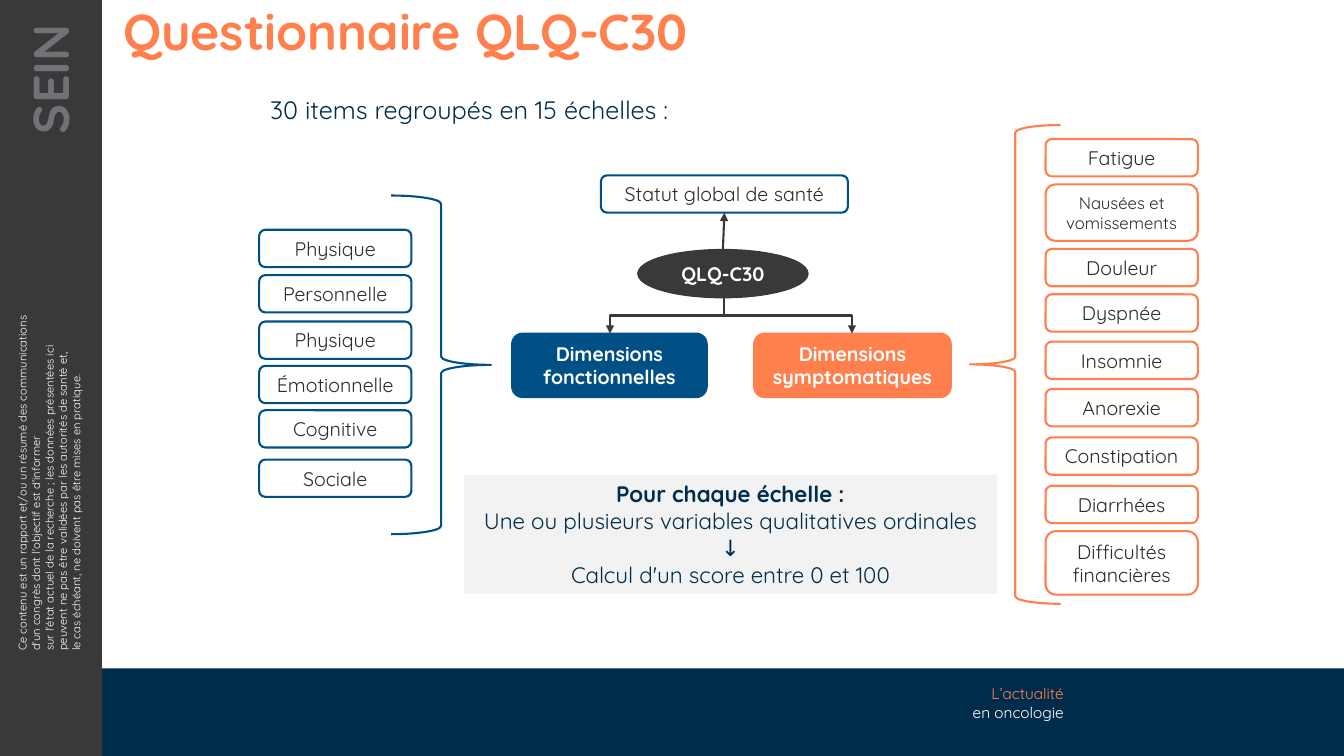
from lxml import etree
from pptx import Presentation
from pptx.dml.color import RGBColor
from pptx.enum import shapes, text
from pptx.oxml import ns
from pptx.util import Inches, Pt

NAVY = RGBColor(0x00, 0x2C, 0x4C)
INK = RGBColor(0x00, 0x2D, 0x4C)
BLUE = RGBColor(0x00, 0x50, 0x86)
CORAL = RGBColor(0xFF, 0x7F, 0x4D)
DARK = RGBColor(0x3A, 0x38, 0x39)
BLACK = RGBColor(0x2B, 0x2A, 0x2C)
GREY = RGBColor(0x73, 0x70, 0x78)
PALE = RGBColor(0xF2, 0xF2, 0xF2)
WHITE = RGBColor(0xFF, 0xFF, 0xFF)

KIND = shapes.MSO_SHAPE
LINK = shapes.MSO_CONNECTOR
ALIGN = text.PP_ALIGN
MID = text.MSO_ANCHOR.MIDDLE

NOTE = ("Ce contenu est un rapport et/ou un résumé des communications "
        "d'un congrès dont l'objectif est d'informer \v"
        "sur l'état actuel de la recherche ; les données présentées ici "
        "peuvent ne pas être validées par les autorités de santé et, \v"
        "le cas échéant, ne doivent pas être mises en pratique.")

# Label, top, height, text size
LEFT = [
    ("Physique", 2.28, 0.37, 14),
    ("Personnelle", 2.73, 0.37, 14),
    ("Physique", 3.19, 0.37, 14),
    ("Émotionnelle", 3.63, 0.37, 14),
    ("Cognitive", 4.07, 0.37, 14),
    ("Sociale", 4.56, 0.37, 14),
]
RIGHT = [
    ("Fatigue", 1.38, 0.37, 14),
    ("Nausées et vomissements", 1.83, 0.56, 12),
    ("Douleur", 2.47, 0.37, 14),
    ("Dyspnée", 2.92, 0.37, 14),
    ("Insomnie", 3.39, 0.37, 14),
    ("Anorexie", 3.86, 0.37, 14),
    ("Constipation", 4.34, 0.37, 14),
    ("Diarrhées", 4.82, 0.37, 14),
    ("Difficultés financières", 5.27, 0.63, 14),
]


def place(item, box):
    for name, val in zip(("left", "top", "width", "height"), box):
        setattr(item, name, Inches(val))


def write(item, words, size, color, bold=False, align=ALIGN.LEFT, **frame):
    body = item.text_frame
    for name, val in {"word_wrap": True, **frame}.items():
        setattr(body, name, val)
    body.text = words
    look = {"name": "Quicksand", "size": Pt(size), "bold": bold}
    for para in body.paragraphs:
        para.alignment = align
        for run in para.runs:
            for name, val in look.items():
                setattr(run.font, name, val)
            run.font.color.rgb = color
    return body


def label(slide, box, words, size, color, turn=0, **form):
    item = slide.shapes.add_textbox(*map(Inches, box))
    item.rotation = turn
    return write(item, words, size, color, **form)


def shape(slide, kind, box, fill=None, line=None):
    item = slide.shapes.add_shape(kind, *map(Inches, box))
    item.shadow.inherit = False
    if fill is None:
        item.fill.background()
    else:
        item.fill.solid()
        item.fill.fore_color.rgb = fill
    if line is None:
        item.line.fill.background()
    else:
        item.line.color.rgb = line
        item.line.width = Pt(1.5)
    return item


def node(slide, box, words, line, fill=None, size=14, kind=KIND.ROUNDED_RECTANGLE):
    item = shape(slide, kind, box, fill, line)
    color = BLACK if fill is None else WHITE
    write(item, words, size, color, fill is not None, ALIGN.CENTER,
          vertical_anchor=MID)
    return item


def stack(slide, left, rows, line):
    for words, top, high, size in rows:
        node(slide, (left, top, 1.51, high), words, line, size=size)


def arrow(slide, kind, x1, y1, x2, y2):
    link = slide.shapes.add_connector(kind, *map(Inches, (x1, y1, x2, y2)))
    link.line.color.rgb = DARK
    link.line.width = Pt(1.5)
    tip = etree.SubElement(link.line._get_or_add_ln(), ns.qn("a:tailEnd"))
    tip.set("type", "triangle")
    etree.SubElement(link._element.spPr, ns.qn("a:effectLst"))
    return link


def elbow(slide, x1, y1, x2, y2):
    # A quarter turn makes the elbow leave downwards
    side = 1 if x2 < x1 else -1
    midx, midy = (x1 + x2) / 2, (y1 + y2) / 2
    half, drop = abs(x2 - x1) / 2, side * (y2 - y1) / 2
    link = arrow(slide, LINK.ELBOW, midx - drop, midy - half,
                 midx + drop, midy + half)
    turn = 90 if side > 0 else 270
    link._element.spPr.find(ns.qn("a:xfrm")).set("rot", str(turn * 60000))


def main():
    deck = Presentation()
    deck.slide_width, deck.slide_height = Inches(13.33), Inches(7.5)
    slide = deck.slides.add_slide(deck.slide_layouts[5])

    # Side band and footer
    shape(slide, KIND.RECTANGLE, (1.01, 6.63, 12.32, 0.87), NAVY)
    shape(slide, KIND.RECTANGLE, (0, 0, 1.01, 7.5), DARK)
    label(slide, (-1.31, 4.37, 3.6, 0.77), NOTE, 8, WHITE, 270)
    label(slide, (-1.04, 1.18, 3.07, 0.71), "SEIN", 36, GREY, 270,
          bold=True, align=ALIGN.RIGHT, margin_right=Inches(0.24))
    foot = label(slide, (9.01, 6.74, 1.64, 0.47), "L’actualité\ven oncologie",
                 11, CORAL, align=ALIGN.RIGHT)
    foot.paragraphs[0].runs[1].font.color.rgb = WHITE

    # Title and lead
    title = slide.shapes.title
    place(title, (1.02, 0.05, 12.31, 0.57))
    body = write(title, "Questionnaire QLQ-C30", 36, CORAL, True,
                 margin_left=Inches(0.2), vertical_anchor=MID,
                 auto_size=text.MSO_AUTO_SIZE.NONE)
    body.paragraphs[0].line_spacing = 0.9
    label(slide, (2.58, 0.89, 5.29, 0.4),
          "30 items regroupés en 15 échelles :", 18, INK)

    # Central diagram
    state = node(slide, (5.96, 1.74, 2.45, 0.37), "Statut global de santé", BLUE)
    node(slide, (5.08, 3.31, 1.93, 0.63), "Dimensions fonctionnelles", BLUE, BLUE)
    node(slide, (7.48, 3.31, 1.95, 0.63), "Dimensions symptomatiques", CORAL, CORAL)
    core = node(slide, (6.33, 2.48, 1.68, 0.47), "QLQ-C30", DARK, DARK,
                kind=KIND.OVAL)
    rise = arrow(slide, LINK.STRAIGHT, 7.18, 2.48, 7.18, 2.11)
    rise.begin_connect(core, 0)
    rise.end_connect(state, 2)
    for end in (6.05, 8.45):
        elbow(slide, 7.18, 2.95, end, 3.31)

    # Scales on both sides
    stack(slide, 2.57, LEFT, BLUE)
    stack(slide, 10.37, RIGHT, CORAL)
    shape(slide, KIND.RIGHT_BRACE, (3.88, 1.94, 0.99, 3.36), line=BLUE)
    shape(slide, KIND.LEFT_BRACE, (9.62, 1.24, 0.9, 4.75), line=CORAL)

    # Scoring panel
    panel = shape(slide, KIND.RECTANGLE, (4.6, 4.71, 5.29, 1.18), PALE)
    score = write(panel, "Pour chaque échelle :\n"
                  "Une ou plusieurs variables qualitatives ordinales\n"
                  "↓\nCalcul d'un score entre 0 et 100",
                  16, INK, align=ALIGN.CENTER, vertical_anchor=MID)
    score.paragraphs[0].runs[0].font.bold = True

    deck.save("out.pptx")


if __name__ == "__main__":
    main()
